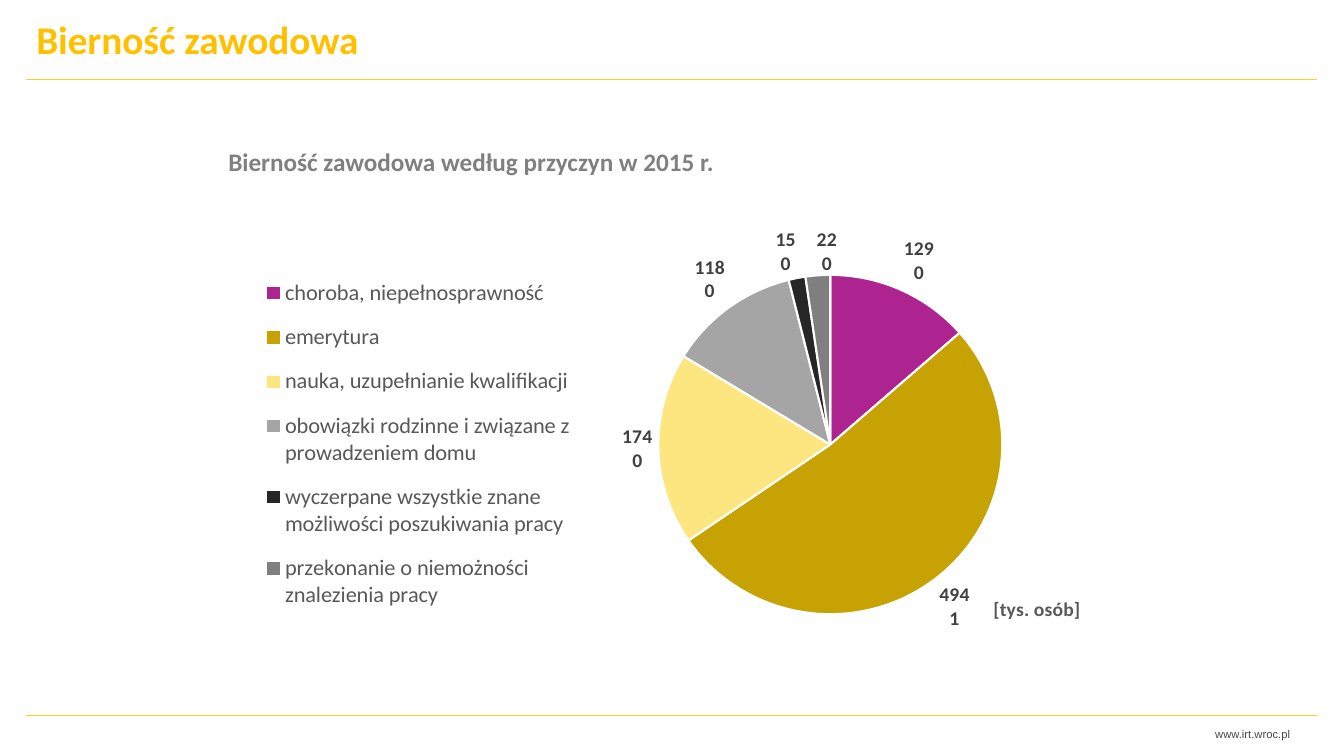
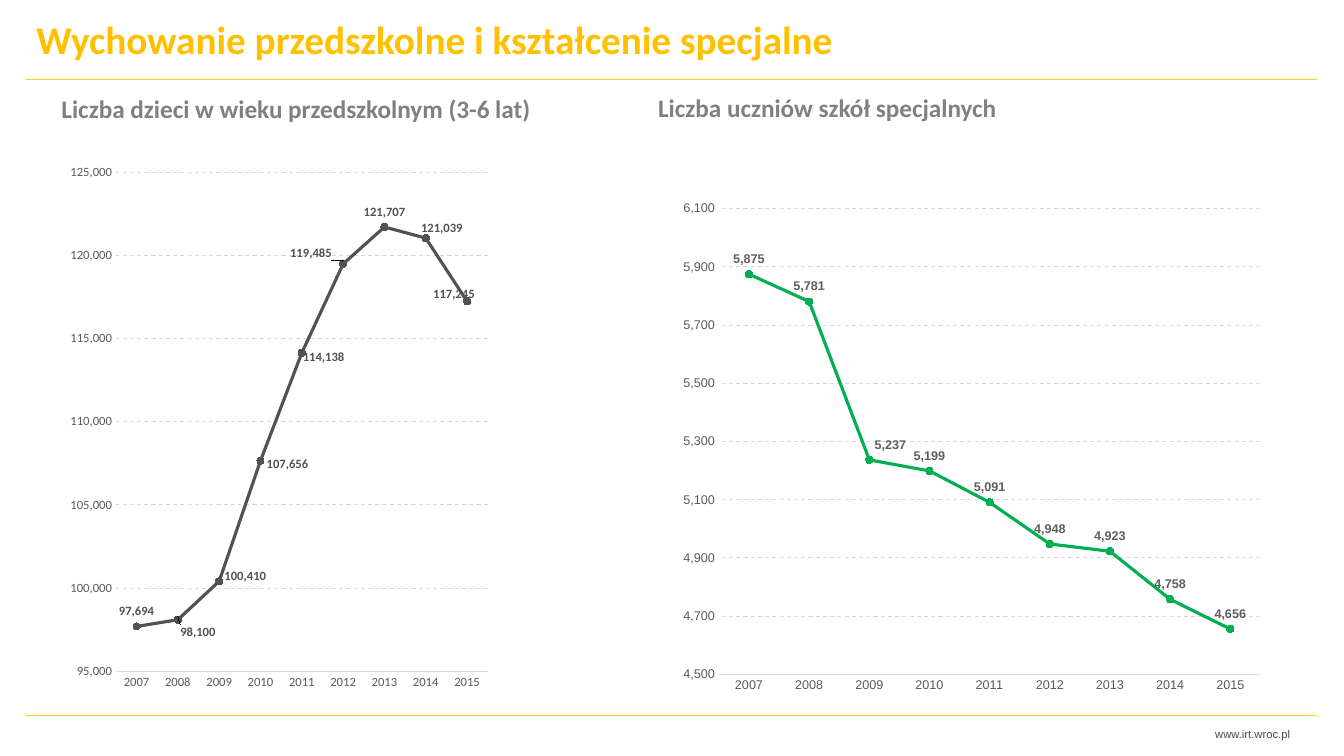
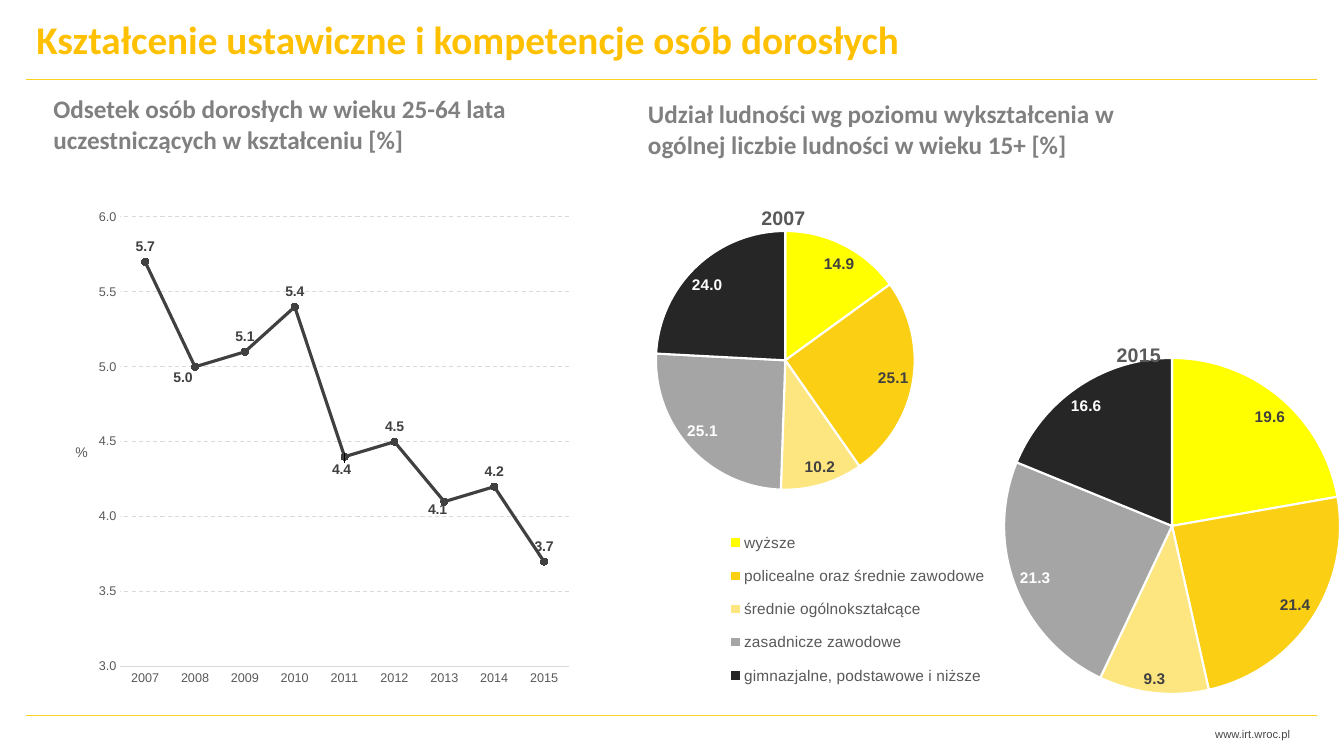
from copy import deepcopy
from dataclasses import dataclass, field
from typing import NamedTuple

from lxml import etree
from pptx import Presentation
from pptx import util as u
from pptx.chart.data import CategoryChartData
from pptx.dml.color import RGBColor
from pptx.enum import chart as kinds, dml, shapes, text
from pptx.oxml.ns import qn

# Grid: 160 columns by 90 rows of square cells
CELL = u.Inches(1 / 12)
COLUMNS, ROWS = 160, 90

# Shared colours and fonts
GOLD, RULE, GREY, FOOTER = "FFC000", "FCD221", "808080", "464646"
AXIS, GRID, DARK, WHITE = "595959", "D9D9D9", "404040", "FFFFFF"
SANS, PLAIN = "Calibri", "Arial"
CAUSE_COLORS = ("AD238F", "C7A203", "FDE57F", "A5A5A5", "262626", "7F7F7F")
LEVEL_COLORS = ("FFFF00", "FBCF13", "FDE57F", "A5A5A5", "262626")

CAUSES = ("choroba, niepełnosprawność", "emerytura",
          "nauka, uzupełnianie kwalifikacji",
          "obowiązki rodzinne i związane z prowadzeniem domu",
          "wyczerpane wszystkie znane możliwości poszukiwania pracy",
          "przekonanie o niemożności znalezienia pracy")
LEVELS = ("wyższe", "policealne oraz średnie zawodowe",
          "średnie ogólnokształcące", "zasadnicze zawodowe",
          "gimnazjalne, podstawowe i niższe")
YEARS = tuple(str(year) for year in range(2007, 2016))


class Area(NamedTuple):
    """Left, top, width and height in grid cells."""
    left: float
    top: float
    width: float
    height: float

    def emu(self) -> list[int]:
        return [round(cells * CELL) for cells in self]


class Heading(NamedTuple):
    words: str
    area: Area
    inset: bool = True


@dataclass
class ChartCard:
    """Layouts and label shifts are shares of the chart's size."""
    area: Area
    values: tuple
    plot: tuple
    label_size: int
    label_color: str = DARK
    font: str = PLAIN
    number_format: str = "#,##0.0"
    shifts: dict = field(default_factory=dict)


@dataclass
class LineCard(ChartCard):
    color: str = DARK
    scale: tuple = (3, 6, 0.5)
    unit: str = ""
    unit_at: tuple = (0, 0)


@dataclass
class PieCard(ChartCard):
    categories: tuple = LEVELS
    colors: tuple = LEVEL_COLORS
    title: str = ""
    title_at: tuple = (0, 0)
    legend_at: tuple = ()
    legend_size: int = 11
    percent: bool = False
    white_labels: tuple = ()


class Page(NamedTuple):
    title: str
    headings: list
    charts: list


PAGES = [
    Page("Bierność zawodowa",
         [Heading("Bierność zawodowa według przyczyn w 2015 r.",
                  Area(26, 16.8, 83, 4.8))],
         [PieCard(Area(26, 26.4, 112, 52.3), (129, 494, 174, 118, 15, 22),
                  (0.467, 0.109, 0.367, 0.783), 14, font=SANS,
                  number_format="#,##0", shifts={4: (0, 0), 5: (0.01, 0)},
                  categories=CAUSES, colors=CAUSE_COLORS,
                  title="[tys. osób]", title_at=(0.82, 0.84),
                  legend_at=(0.04, 0.08, 0.345, 0.84), legend_size=16,
                  percent=True)]),
    Page("Wychowanie przedszkolne i kształcenie specjalne",
         [Heading("Liczba dzieci w wieku przedszkolnym (3-6 lat)",
                  Area(7.32, 11.16, 72.2, 3.6), inset=False),
          Heading("Liczba uczniów szkół specjalnych",
                  Area(77.16, 10.44, 80, 5.16))],
         [LineCard(Area(7.32, 18.36, 51.84, 65.16),
                   (97694, 98100, 100410, 107656, 114138, 119485, 121707,
                    121039, 117245),
                   (0.125, 0.033, 0.854, 0.912), 9, "525252", SANS, "#,##0",
                   {1: (0.046, 0.05), 2: (0.06, 0.018), 3: (0.062, 0.033),
                    4: (0.05, 0.035), 5: (-0.074, 0.007),
                    7: (0.037, 0.009), 8: (-0.03, 0.015)},
                   color="525252", scale=(95000, 125000, 5000)),
          LineCard(Area(75.48, 20.16, 76.56, 65.16),
                   (5875, 5781, 5237, 5199, 5091, 4948, 4923, 4758, 4656),
                   (0.132, 0.072, 0.842, 0.851), 9, "5F5F5F",
                   number_format="#,##0", shifts={2: (0.033, 0)},
                   color="00B050", scale=(4500, 6100, 200))]),
    Page("Kształcenie ustawiczne i kompetencje osób dorosłych",
         [Heading("Odsetek osób dorosłych w wieku 25-64 lata "
                  "uczestniczących w kształceniu [%]",
                  Area(6.36, 11.16, 62.64, 8.52), inset=False),
          Heading("Udział ludności wg poziomu wykształcenia w ogólnej "
                  "liczbie ludności w wieku 15+ [%]",
                  Area(75.96, 11.16, 64.56, 8.52))],
         [LineCard(Area(6.36, 23.76, 62.64, 59.16),
                   (5.7, 5, 5.1, 5.4, 4.4, 4.5, 4.1, 4.2, 3.7),
                   (0.127, 0.035, 0.853, 0.905), 10,
                   shifts={1: (-0.023, 0.052), 4: (-0.006, 0.058),
                           6: (-0.013, 0.048)},
                   unit="%", unit_at=(0.037, 0.486)),
          PieCard(Area(56.04, 20.16, 74.76, 42.36),
                  (14.9, 25.1, 10.2, 25.1, 24),
                  (0.295, 0.173, 0.412, 0.728), 11,
                  title="2007", title_at=(0.457, 0.09), white_labels=(3, 4)),
          PieCard(Area(85.2, 35.4, 76.32, 48.96),
                  (19.6, 21.4, 9.3, 21.3, 16.6),
                  (0.45, 0.147, 0.524, 0.818), 11,
                  title="2015", title_at=(0.62, 0.1),
                  legend_at=(0.012, 0.537, 0.42, 0.442),
                  white_labels=(3, 4))]),
]


# Text and colour helpers
def rgb(code: str) -> RGBColor:
    return RGBColor.from_string(code)


def style(font, size: float, color: str, name: str = SANS,
          bold: bool = False) -> None:
    font.size, font.name, font.bold = u.Pt(size), name, bold
    font.color.rgb = rgb(color)


def write(frame, words: str, size: float, color: str, name: str = SANS,
          bold: bool = True, align=text.PP_ALIGN.LEFT,
          inset: bool = False) -> None:
    frame.word_wrap = True
    frame.auto_size = text.MSO_AUTO_SIZE.NONE
    frame.vertical_anchor = text.MSO_ANCHOR.TOP
    if not inset:
        frame.margin_left = frame.margin_right = 0
        frame.margin_top = frame.margin_bottom = 0
    para = frame.paragraphs[0]
    para.alignment = align
    span = para.add_run()
    span.text = words
    style(span.font, size, color, name, bold)


# Chart XML helpers
def node(tag: str, **attributes: str):
    element = etree.Element(qn(tag))
    for key, value in attributes.items():
        element.set(key, value)
    return element


def layout_node(numbers: tuple, edge: bool = True, inner: bool = False):
    layout = node("c:layout")
    manual = etree.SubElement(layout, qn("c:manualLayout"))
    if inner:
        manual.append(node("c:layoutTarget", val="inner"))
    if edge:
        manual.append(node("c:xMode", val="edge"))
        manual.append(node("c:yMode", val="edge"))
    for axis, number in zip("xywh", numbers):
        manual.append(node(f"c:{axis}", val=str(number)))
    return layout


def place(parent, numbers: tuple, after: str = "", inner: bool = False) -> None:
    for old in parent.findall(qn("c:layout")):
        parent.remove(old)
    layout = layout_node(numbers, inner=inner)
    if after:
        parent.find(qn(after)).addnext(layout)
    else:
        parent.insert(0, layout)


def clear_background(chart) -> None:
    fill = node("c:spPr")
    fill.append(node("a:noFill"))
    line = etree.SubElement(fill, qn("a:ln"))
    line.append(node("a:noFill"))
    chart._chartSpace.find(qn("c:txPr")).addprevious(fill)


def label_series(series, card: ChartCard, position, percent: bool = False) -> None:
    labels = series.data_labels
    style(labels.font, card.label_size, card.label_color, card.font, True)
    labels.number_format = card.number_format
    labels.number_format_is_linked = False
    labels.position = position
    labels.show_value, labels.show_percentage = True, percent
    root = labels._element
    leader = root.find(qn("c:showLeaderLines"))
    if leader is not None:
        root.remove(leader)
    if percent:
        separator = node("c:separator")
        separator.text = "\n"
        root.append(separator)
    shared = list(root)
    points = sorted(set(card.shifts) | set(getattr(card, "white_labels", ())))
    for spot, index in enumerate(points):
        label = node("c:dLbl")
        label.append(node("c:idx", val=str(index)))
        if index in card.shifts:
            label.append(layout_node(card.shifts[index], edge=False))
        label.extend(deepcopy(part) for part in shared)
        root.insert(spot, label)


# Charts
def add_chart(page, card: ChartCard, kind, categories: tuple):
    data = CategoryChartData(number_format=card.number_format)
    data.categories = categories
    data.add_series("Series 1", card.values)
    chart = page.shapes.add_chart(kind, *card.area.emu(), data).chart
    style(chart.font, 10, "000000")
    chart.has_title = chart.has_legend = False
    chart.plots[0].vary_by_categories = isinstance(card, PieCard)
    clear_background(chart)
    place(chart._chartSpace.chart.plotArea, card.plot, inner=True)
    return chart


def draw_line(page, card: LineCard) -> None:
    chart = add_chart(page, card, kinds.XL_CHART_TYPE.LINE_MARKERS, YEARS)
    years, amounts = chart.category_axis, chart.value_axis
    for axis in (years, amounts):
        axis.major_tick_mark = axis.minor_tick_mark = kinds.XL_TICK_MARK.NONE
        style(axis.tick_labels.font, 9, AXIS, card.font)
    years.format.line.color.rgb = rgb(GRID)
    years.format.line.width = u.Pt(0.75)
    amounts.format.line.fill.background()
    (amounts.minimum_scale, amounts.maximum_scale,
     amounts.major_unit) = card.scale
    amounts.tick_labels.number_format = card.number_format
    amounts.tick_labels.number_format_is_linked = False
    grid = amounts.major_gridlines.format.line
    grid.color.rgb, grid.width = rgb(GRID), u.Pt(0.75)
    grid.dash_style = dml.MSO_LINE.DASH
    if card.unit:
        title = amounts.axis_title
        span = title.text_frame.paragraphs[0].add_run()
        span.text = card.unit
        style(span.font, 10, AXIS, card.font)
        body = title._element.find(".//" + qn("a:bodyPr"))
        body.set("rot", "0")
        body.set("vert", "horz")
        place(title._element, card.unit_at, "c:tx")

    series = chart.plots[0].series[0]
    series.smooth = False
    series.format.line.color.rgb = rgb(card.color)
    series.format.line.width = u.Pt(2.25)
    marker = series.marker
    marker.style, marker.size = kinds.XL_MARKER_STYLE.CIRCLE, 5
    marker.format.fill.solid()
    marker.format.fill.fore_color.rgb = rgb(card.color)
    marker.format.line.color.rgb = rgb(card.color)
    label_series(series, card, kinds.XL_LABEL_POSITION.ABOVE)


def draw_pie(page, card: PieCard) -> None:
    chart = add_chart(page, card, kinds.XL_CHART_TYPE.PIE, card.categories)
    title = chart.chart_title
    span = title.text_frame.paragraphs[0].add_run()
    span.text = card.title
    style(span.font, 14, AXIS, card.font, True)
    place(title._element, card.title_at, "c:tx")
    if card.legend_at:
        chart.has_legend = True
        legend = chart.legend
        legend.position = kinds.XL_LEGEND_POSITION.LEFT
        legend.include_in_layout = False
        style(legend.font, card.legend_size, AXIS, card.font)
        place(legend._element, card.legend_at, "c:legendPos")

    series = chart.plots[0].series[0]
    for index, color in enumerate(card.colors):
        slice_format = series.points[index].format
        slice_format.fill.solid()
        slice_format.fill.fore_color.rgb = rgb(color)
        slice_format.line.color.rgb = rgb(WHITE)
        slice_format.line.width = u.Pt(1.5)
    spots = kinds.XL_LABEL_POSITION
    label_series(series, card,
                 spots.OUTSIDE_END if card.percent else spots.BEST_FIT,
                 card.percent)
    for index in card.white_labels:
        series.points[index].data_label.font.color.rgb = rgb(WHITE)


# Shared frame: two rules and the footer, kept on the layout
def frame_layout(layout, page) -> None:
    parts = []
    for row in (9.48, 85.2):
        left, top, right, bottom = Area(3.12, row, 156.84, row).emu()
        rule = page.shapes.add_connector(
            shapes.MSO_CONNECTOR.STRAIGHT, left, top, right, bottom)
        rule.line.color.rgb, rule.line.width = rgb(RULE), u.Pt(0.5)
        rule._element.spPr.append(node("a:effectLst"))
        parts.append(rule)
    box = page.shapes.add_textbox(*Area(136.2, 86.64, 17.4, 1.56).emu())
    write(box.text_frame, "www.irt.wroc.pl", 8, FOOTER, PLAIN, False,
          text.PP_ALIGN.RIGHT)
    for part in parts + [box]:
        layout.shapes._spTree.append(part._element)


def set_area(shape, area: Area) -> None:
    shape.left, shape.top, shape.width, shape.height = area.emu()


def main() -> None:
    deck = Presentation()
    deck.slide_width, deck.slide_height = COLUMNS * CELL, ROWS * CELL
    layout = deck.slide_layouts[5]
    set_area(layout.placeholders[0], Area(4.32, 1.8, 143.2, 5.16))

    for number, content in enumerate(PAGES):
        page = deck.slides.add_slide(layout)
        if number == 0:
            frame_layout(layout, page)
        write(page.shapes.title.text_frame, content.title, 28, GOLD)
        for heading in content.headings:
            box = page.shapes.add_textbox(*heading.area.emu())
            write(box.text_frame, heading.words, 18, GREY,
                  inset=heading.inset)
        for card in content.charts:
            draw = draw_pie if isinstance(card, PieCard) else draw_line
            draw(page, card)

    deck.save("out.pptx")


if __name__ == "__main__":
    main()
